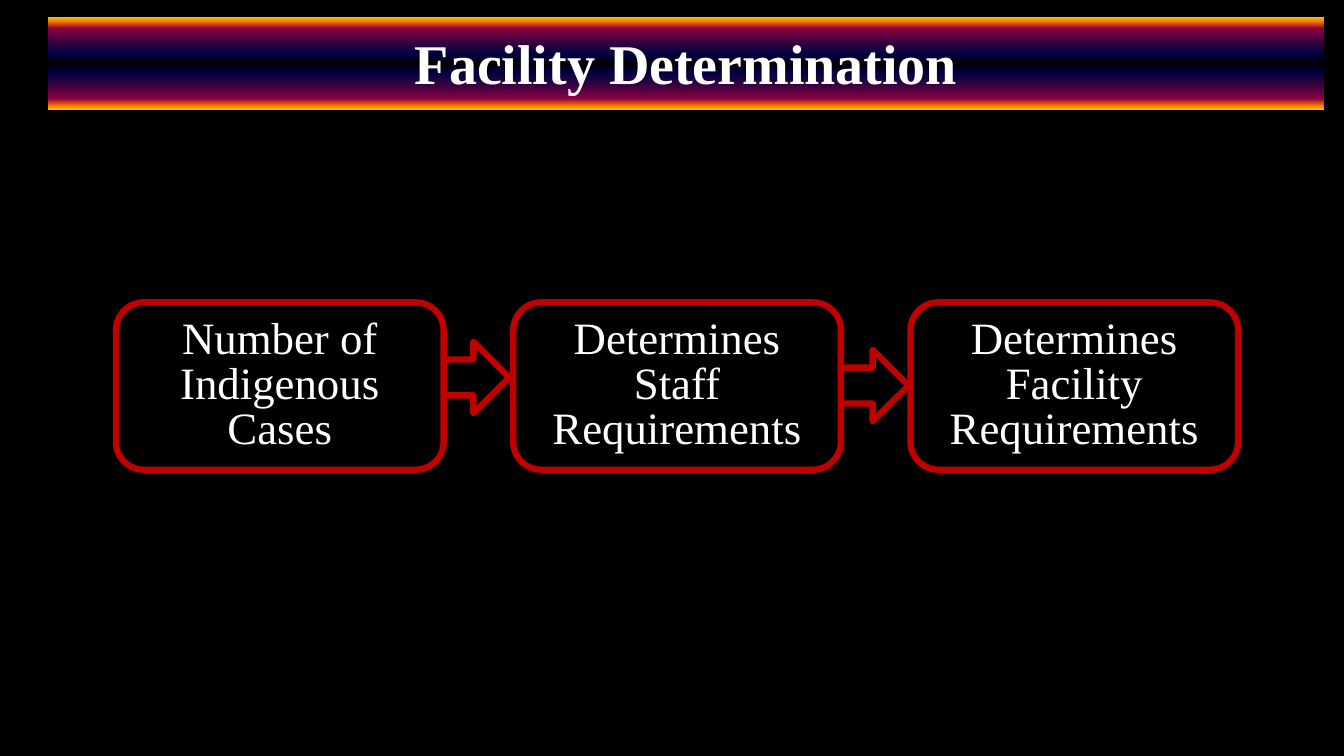
from lxml import etree
from pptx import Presentation
from pptx.dml.color import RGBColor
from pptx.enum.shapes import MSO_SHAPE as Preset
from pptx.enum.text import MSO_ANCHOR as Anchor, PP_ALIGN as Align
from pptx.oxml.ns import qn
from pptx.util import Inches, Pt

BLACK = RGBColor(0x00, 0x00, 0x00)
WHITE = RGBColor(0xFF, 0xFF, 0xFF)
RED = RGBColor(0xC0, 0x00, 0x00)
ORANGE = RGBColor(0xF2, 0x73, 0x00)
AMBER = RGBColor(0xFF, 0xBF, 0x00)
CRIMSON = RGBColor(0x8F, 0x00, 0x40)
PURPLE = RGBColor(0x40, 0x00, 0x40)
NAVY = RGBColor(0x00, 0x00, 0x40)

FONT = "Times New Roman"
HALF_BAND = [(0, AMBER), (5, ORANGE), (12, CRIMSON), (25, PURPLE), (40, NAVY)]
STEPS = [
    ["Number of Indigenous Cases"],
    ["Determines Staff Requirements"],
    ["Determines", "Facility Requirements"],
]
STEP_LEFT, STEP_PITCH = 1.15, 3.94
ARROWS = [(8.1, 3.47), (4.14, 3.39)]


def add_preset(slide, preset, left, top, width, height):
    """Add a preset shape without a shadow."""
    shape = slide.shapes.add_shape(
        preset, Inches(left), Inches(top), Inches(width), Inches(height))
    shape.shadow.inherit = False
    return shape


def outline_red(shape):
    """Give a shape the thick red outline of the flow."""
    shape.line.color.rgb = RED
    shape.line.width = Pt(4.5)


def write_lines(shape, lines, size, bold=False, spacing=None):
    """Write centred white paragraphs into a shape."""
    frame = shape.text_frame
    frame.word_wrap = True
    for index, line in enumerate(lines):
        paragraph = frame.paragraphs[0] if index == 0 else frame.add_paragraph()
        paragraph.alignment = Align.CENTER
        paragraph.line_spacing = spacing
        run = paragraph.add_run()
        run.text = line
        run.font.name = FONT
        run.font.size = Pt(size)
        run.font.bold = bold
        run.font.color.rgb = WHITE


def fill_mirrored_gradient(shape):
    """Fill a shape with a vertical gradient mirrored around black."""
    shape.fill.gradient()
    shape.fill.gradient_angle = 270
    mirrored = [(100 - place, color) for place, color in reversed(HALF_BAND)]
    stops = shape.fill._fill._gradFill.find(qn("a:gsLst"))
    for stop in list(stops):
        stops.remove(stop)
    for place, color in HALF_BAND + [(50, BLACK)] + mirrored:
        stop = etree.SubElement(stops, qn("a:gs"), pos=str(place * 1000))
        etree.SubElement(stop, qn("a:srgbClr"), val=str(color))


def add_title_band(slide, title):
    """Add the gradient band with the slide title."""
    band = add_preset(slide, Preset.RECTANGLE, 0.48, 0.17, 12.65, 0.92)
    fill_mirrored_gradient(band)
    band.line.fill.background()
    band.text_frame.vertical_anchor = Anchor.TOP
    band.text_frame.margin_top = Inches(0.11)
    write_lines(band, [title], 40, bold=True)


def add_flow_arrow(slide, left, top):
    """Add a hollow arrow between two steps."""
    arrow = add_preset(slide, Preset.RIGHT_ARROW, left, top, 0.91, 0.71)
    arrow.fill.background()
    outline_red(arrow)


def add_step(slide, left, lines):
    """Add a rounded box for one step."""
    step = add_preset(slide, Preset.ROUNDED_RECTANGLE, left, 3, 3.25, 1.66)
    step.fill.solid()
    step.fill.fore_color.rgb = BLACK
    outline_red(step)
    step.text_frame.vertical_anchor = Anchor.MIDDLE
    write_lines(step, lines, 32, spacing=Pt(32))


def main():
    """Build and save the slide."""
    deck = Presentation()
    deck.slide_width, deck.slide_height = Inches(13.33), Inches(7.5)
    slide = deck.slides.add_slide(deck.slide_layouts[6])
    slide.background.fill.solid()
    slide.background.fill.fore_color.rgb = BLACK
    add_title_band(slide, "Facility Determination")
    for left, top in ARROWS:
        add_flow_arrow(slide, left, top)
    for index, lines in enumerate(STEPS):
        add_step(slide, STEP_LEFT + index * STEP_PITCH, lines)
    deck.save("out.pptx")


if __name__ == "__main__":
    main()
